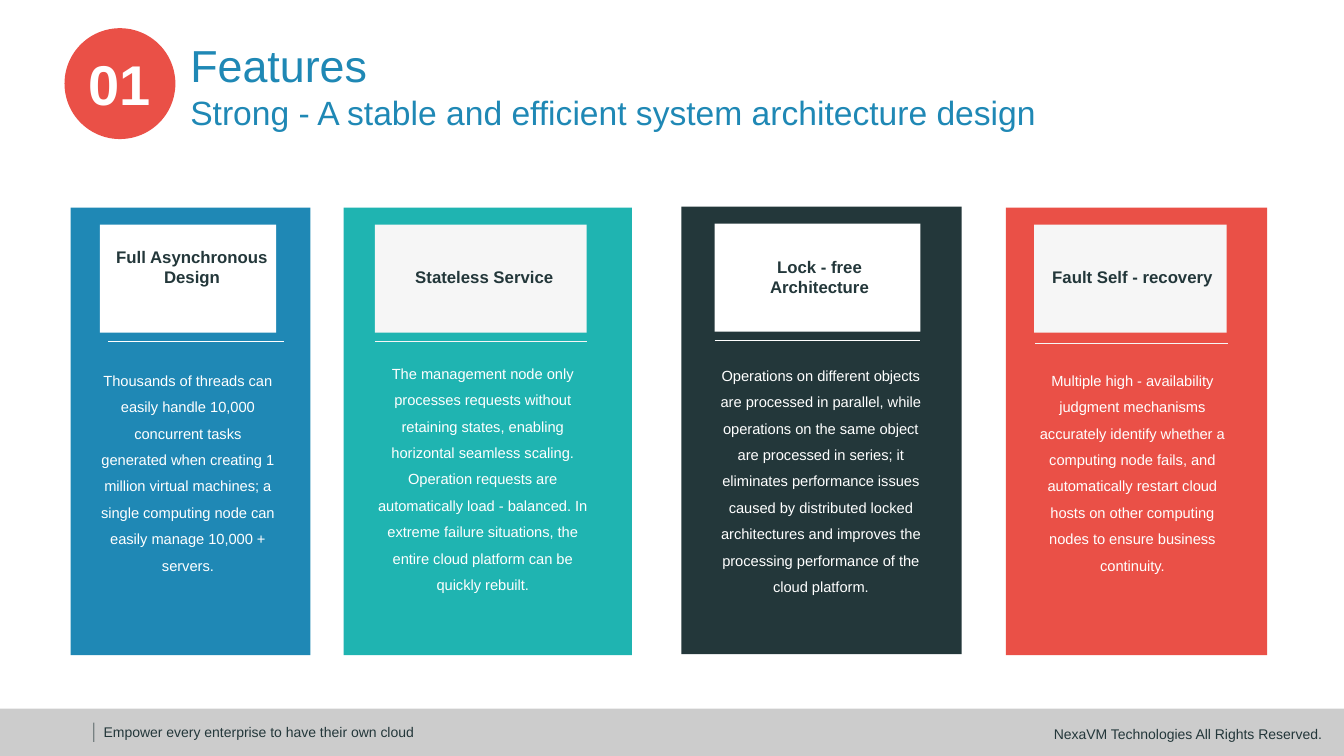
from lxml import etree
from pptx import Presentation, util as u
from pptx.dml import color
from pptx.enum import shapes, text
from pptx.oxml import ns

# Grid of 0.1 inch cells: 133.33 columns by 75 rows
CELL = u.Inches(0.1)
COLUMNS, ROWS = 133.33, 75
BLUE, TEAL, DARK, RED = "1F88B5", "1FB4B1", "23373A", "EA5047"
WHITE, PALE = "FFFFFF", "F6F6F6"
LEFT, CENTER, RIGHT = text.PP_ALIGN.LEFT, text.PP_ALIGN.CENTER, text.PP_ALIGN.RIGHT
TOP, MIDDLE = text.MSO_ANCHOR.TOP, text.MSO_ANCHOR.MIDDLE
RECT, OVAL = shapes.MSO_SHAPE.RECTANGLE, shapes.MSO_SHAPE.OVAL

deck = Presentation()
deck.slide_width, deck.slide_height = int(COLUMNS * CELL), ROWS * CELL
slide = deck.slides.add_slide(deck.slide_layouts[6])


def paint(fill, hex_color, alpha=100):
    fill.solid()
    fill.fore_color.rgb = color.RGBColor.from_string(hex_color)
    if alpha < 100:
        solid = fill._xPr.find(ns.qn("a:solidFill"))
        etree.SubElement(solid[0], ns.qn("a:alpha"), val=str(alpha * 1000))


def write(area, lines, hex_color, align=LEFT, anchor=TOP, spacing=1.0, bold=False):
    frame = slide.shapes.add_textbox(*(int(n * CELL) for n in area)).text_frame
    frame.word_wrap = True
    frame.vertical_anchor = anchor
    for i, (words, size) in enumerate(lines):
        paragraph = frame.add_paragraph() if i else frame.paragraphs[0]
        paragraph.alignment = align
        paragraph.line_spacing = spacing
        run = paragraph.add_run()
        run.text = words
        for key, value in {"name": "Arial", "size": u.Pt(size), "bold": bold}.items():
            setattr(run.font, key, value)
        paint(run.font.fill, hex_color)


# Feature cards: left, top, width, colour; tag left, width, colour;
# rule left, row; title and its left, top, width; body and its left, top, width
CARD_HEIGHT, TAG_DROP, TAG_HEIGHT = 44.4, 1.7, 10.7
cards = [
    (7, 20.6, 23.8, BLUE, 9.9, 17.5, WHITE, 10.7, 33.9,
     "Full Asynchronous Design", 10.2, 24, 17.7,
     "Thousands of threads can easily handle 10,000 concurrent tasks generated when "
     "creating 1 million virtual machines; a single computing node can easily manage "
     "10,000 + servers.", 9, 35.5, 19.3),
    (34.1, 20.6, 28.6, TEAL, 37.2, 21, PALE, 37.2, 33.9,
     "Stateless Service", 38.2, 26, 19.7,
     "The management node only processes requests without retaining states, enabling "
     "horizontal seamless scaling. Operation requests are automatically load - balanced. "
     "In extreme failure situations, the entire cloud platform can be quickly rebuilt.",
     36.3, 34.8, 23.2),
    (67.6, 20.5, 27.8, DARK, 70.9, 20.4, WHITE, 70.9, 33.8,
     "Lock - free Architecture", 71.7, 25, 19.2,
     "Operations on different objects are processed in parallel, while operations on the "
     "same object are processed in series; it eliminates performance issues caused by "
     "distributed locked architectures and improves the processing performance of the "
     "cloud platform.", 69.6, 35, 23.7),
    (99.8, 20.6, 25.9, RED, 102.6, 19.1, PALE, 102.7, 34.1,
     "Fault Self - recovery", 103.4, 26, 17.9,
     "Multiple high - availability judgment mechanisms accurately identify whether a "
     "computing node fails, and automatically restart cloud hosts on other computing "
     "nodes to ensure business continuity.", 101.8, 35.5, 21.1),
]

# Footer band, number badge, cards and tags, with the rules that go with them
blocks = [(RECT, (0, 70.3, COLUMNS, 4.7), "000000", 20),
          (OVAL, (6.4, 2.8, 11, 11), RED, 100)]
rules = [((9.3, 71.7, 9.3, 73.6), DARK, 50)]
for left, top, width, hue, tag_left, tag_width, tag_hue, rule_left, rule_row, *_ in cards:
    blocks.append((RECT, (left, top, width, CARD_HEIGHT), hue, 100))
    blocks.append((RECT, (tag_left, top + TAG_DROP, tag_width, TAG_HEIGHT), tag_hue, 100))
    rules.append(((rule_left, rule_row, rule_left + tag_width, rule_row), tag_hue, 100))

for outline, area, hue, alpha in blocks:
    block = slide.shapes.add_shape(outline, *(int(n * CELL) for n in area))
    block.shadow.inherit = False
    block.line.fill.background()
    paint(block.fill, hue, alpha)

for ends, hue, alpha in rules:
    rule = slide.shapes.add_connector(shapes.MSO_CONNECTOR.STRAIGHT,
                                      *(int(n * CELL) for n in ends))
    rule.line.width = u.Pt(0.75)
    paint(rule.line.fill, hue, alpha)
    etree.SubElement(rule._element.spPr, ns.qn("a:effectLst"))

# Heading
write((6.6, 4.4, 10.6, 7.7), [("01", 40)], WHITE, CENTER, bold=True)
write((17.9, 3.3, 98, 10.4),
      [("Features", 32),
       ("Strong - A stable and efficient system architecture design", 24)], BLUE)

# Card titles and bodies
for *_, title, title_left, title_top, title_width, body, body_left, body_top, body_width in cards:
    write((title_left, title_top, title_width, 5), [(title, 12)], DARK, CENTER, bold=True)
    write((body_left, body_top, body_width, 27), [(body, 10.5)], WHITE, CENTER, spacing=1.5)

# Footer
write((9.3, 71.3, 40.4, 2.7),
      [("Empower every enterprise to have their own cloud", 10)], DARK, anchor=MIDDLE)
write((70.9, 71.4, 61.2, 2.9),
      [("NexaVM Technologies All Rights Reserved.", 10)], DARK, RIGHT, MIDDLE)

deck.save("out.pptx")
